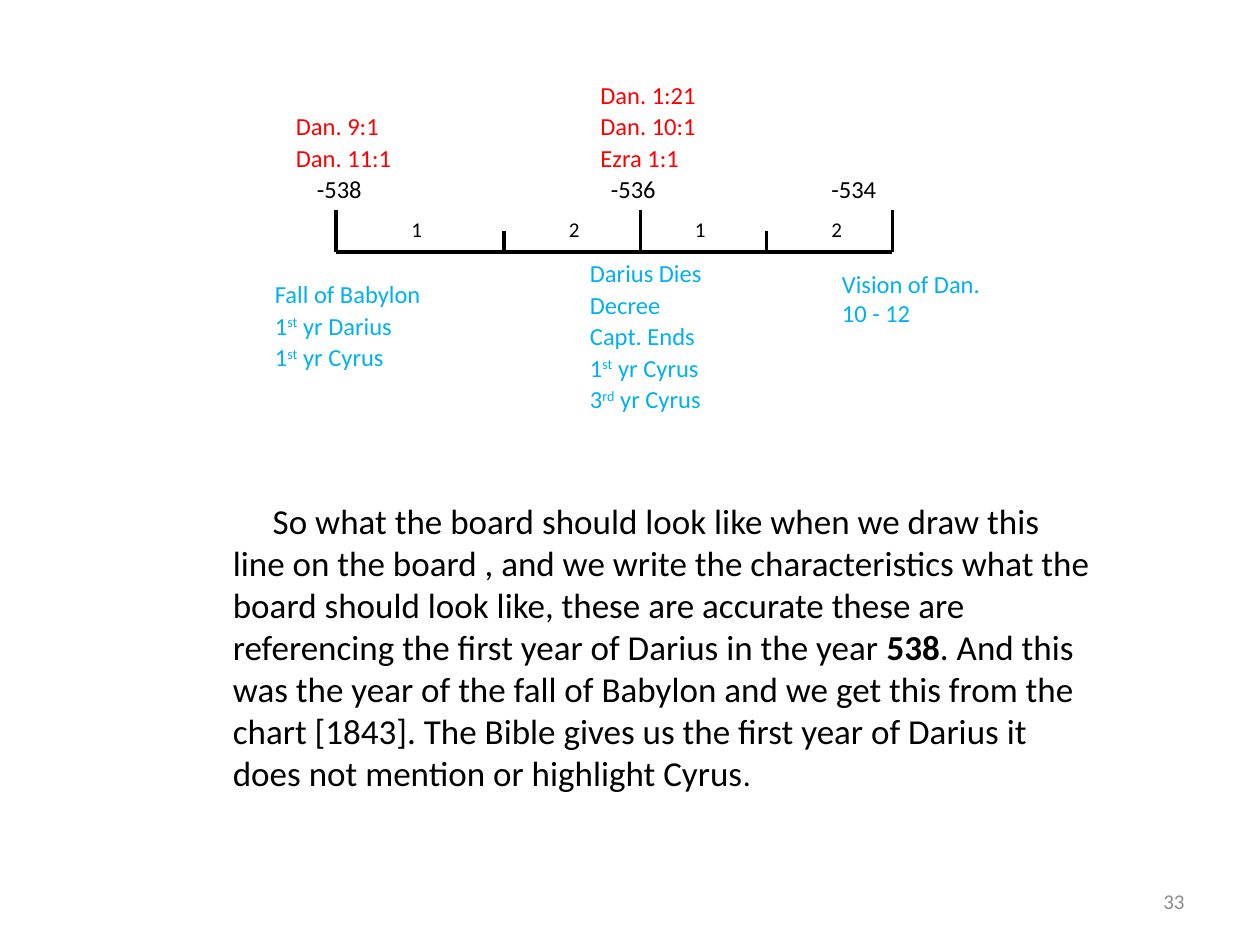
from lxml.etree import SubElement
from pptx import Presentation
from pptx.dml.color import RGBColor
from pptx.enum.shapes import MSO_CONNECTOR as LINK
from pptx.enum.text import MSO_ANCHOR as ANCHOR, MSO_AUTO_SIZE as FIT, PP_ALIGN as ALIGN
from pptx.oxml.ns import qn
from pptx.util import Pt

PX = 7620  # EMU per px, 120 px to the inch
BLACK = RGBColor(0, 0, 0)
RED = RGBColor(255, 0, 0)
BLUE = RGBColor(0, 176, 240)
GRAY = RGBColor(140, 140, 140)

STEP = 30
BASE = 170
TICKS = [(70, 130), (230, 150), (360, 130), (480, 150), (600, 130)]
YEARS = [(40, 210, "-538"), (320, 220, "-536"), (530, 210, "-534")]
COUNTS = [(130, 240, "1"), (280, 110, "2"), (400, 180, "1"), (530, 200, "2")]
# Stacks: left, top, then (width, text) for each line
REFS = [
    (20, 30, [(310, "Dan. 9:1"), (200, "Dan. 11:1")]),
    (310, 0, [(180, "Dan. 1:21"), (310, "Dan. 10:1"), (150, "Ezra 1:1")]),
]
EVENTS = [
    (0, 190, [(170, "Fall of Babylon"), (190, "1^st^ yr Darius"), (310, "1^st^ yr Cyrus")]),
    (300, 170, [(260, "Darius Dies"), (220, "Decree"), (200, "Capt. Ends"),
                (240, "1^st^ yr Cyrus"), (160, "3^rd^ yr Cyrus")]),
]
SPEECH = [
    ("So what the board should look like when we draw this line on the board , "
     "and we write the characteristics what the board should look like, these are "
     "accurate these are referencing the first year of Darius in the year ", {}),
    ("538", {"bold": True}),
    (". And this was the year of the fall of Babylon and we get this from the chart "
     "[1843]. The Bible gives us the first year of Darius it does not mention or "
     "highlight Cyrus", {}),
    (".", {"size": Pt(18)}),
]


def add_text(slide, box, runs, size=14, color=BLACK, fit=FIT.SHAPE_TO_FIT_TEXT):
    """Place one paragraph of (text, format) runs and return its frame."""
    frame = slide.shapes.add_textbox(*(n * PX for n in box)).text_frame
    frame.word_wrap = True
    frame.auto_size = fit
    for text, extra in runs:
        run = frame.paragraphs[0].add_run()
        run.text = text
        style = {"name": "Calibri", "size": Pt(size)} | extra
        for key, value in style.items():
            setattr(run.font, key, value)
        run.font.color.rgb = color
    return frame


def add_label(slide, box, text, size=14, color=BLACK):
    """Place a label; parts between ^ marks are raised."""
    parts = text.split("^")
    frame = add_text(slide, box, [(part, {}) for part in parts], size, color)
    for run in frame.paragraphs[0].runs[1::2]:
        run.font._element.set("baseline", "30000")


def add_line(slide, *ends):
    line = slide.shapes.add_connector(LINK.STRAIGHT, *(n * PX for n in ends))
    line.line.color.rgb = BLACK
    line.line.width = Pt(2.25)
    SubElement(line._element.spPr, qn("a:effectLst"))


def add_timeline(slide, left, top):
    base = top + BASE
    add_line(slide, left + TICKS[0][0], base, left + TICKS[-1][0], base)
    for x, y in TICKS:
        add_line(slide, left + x, base, left + x, top + y)
    for row, y, high, size in ((YEARS, 90, 41, 14), (COUNTS, 130, 36, 12)):
        for x, wide, text in row:
            add_label(slide, (left + x, top + y, wide, high), text, size)
    for stacks, color in ((REFS, RED), (EVENTS, BLUE)):
        for x, y, lines in stacks:
            for i, (wide, text) in enumerate(lines):
                box = (left + x, top + y + i * STEP, wide, 41)
                add_label(slide, box, text, color=color)
    add_label(slide, (left + 540, top + 180, 170, 68), "Vision of Dan. 10 - 12", color=BLUE)


def add_speech(slide, box):
    frame = add_text(slide, box, SPEECH, 20)
    frame.paragraphs[0]._p.get_or_add_pPr().set("indent", str(38 * PX))


def add_number(slide, box):
    frame = add_text(slide, box, [("33", {})], 12, GRAY, FIT.NONE)
    frame.vertical_anchor = ANCHOR.MIDDLE
    frame.paragraphs[0].alignment = ALIGN.RIGHT


def main():
    deck = Presentation()
    deck.slide_width, deck.slide_height = 1200 * PX, 900 * PX
    slide = deck.slides.add_slide(deck.slide_layouts[6])
    add_timeline(slide, 250, 70)
    add_speech(slide, (210, 470, 840, 295))
    add_number(slide, (860, 834, 280, 48))
    deck.save("out.pptx")


if __name__ == "__main__":
    main()
